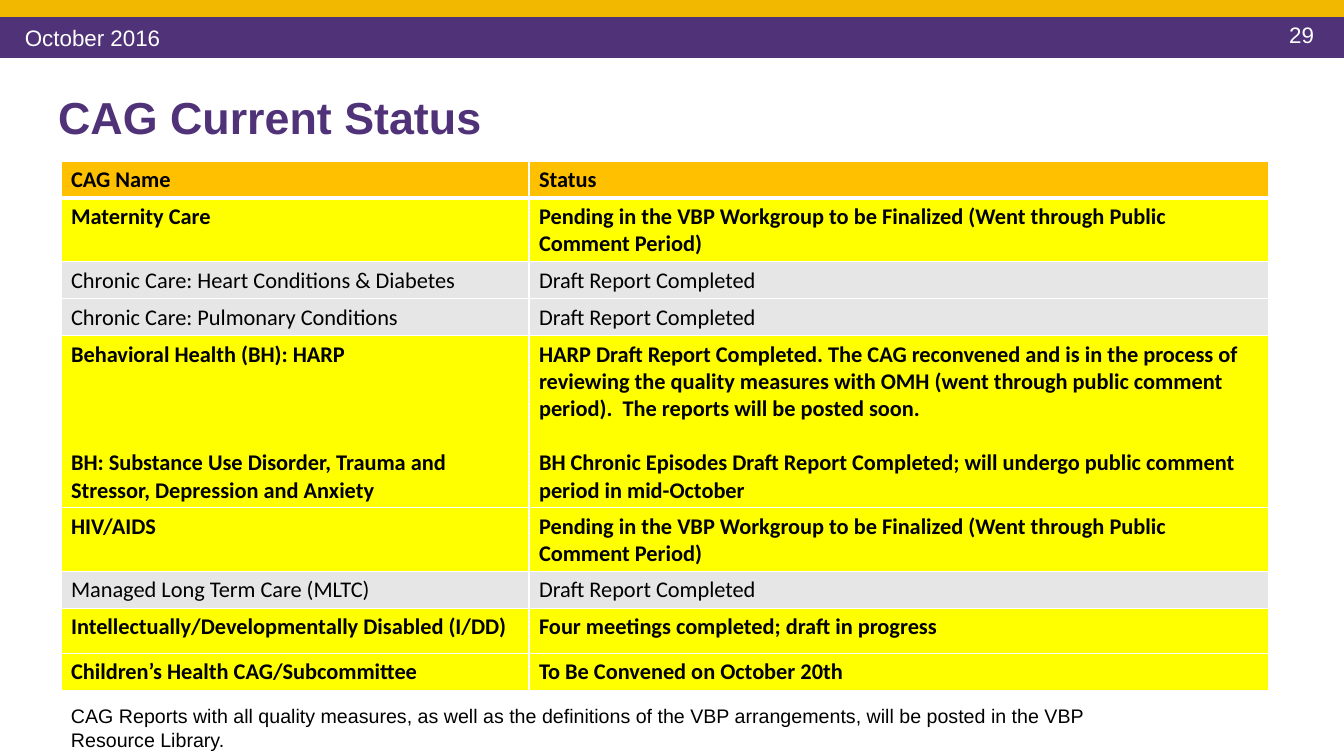
from lxml.etree import SubElement
from pptx import Presentation
from pptx.dml.color import RGBColor
from pptx.enum.shapes import MSO_SHAPE
from pptx.enum.text import MSO_ANCHOR, MSO_AUTO_SIZE, PP_ALIGN
from pptx.oxml.ns import qn
from pptx.util import Emu, Pt

THEME = {
    "purple": "503278", "gold": "F2B800", "header": "FFC000",
    "highlight": "FFFF00", "gray": "E7E6E6", "white": "FFFFFF", "black": "000000",
    "title_size": 32, "band_size": 16, "table_size": 16, "note_size": 14,
    "font": "Arial", "table_font": "Calibri",
}
EMU_PER_PX = 914400 / 100.8


def px(*lengths):
    """Turn pixel lengths into EMU."""
    return [Emu(round(n * EMU_PER_PX)) for n in lengths]


def write(tf, text, size, color, bold=False, font="font", **para):
    """Fill a text frame; each line of text becomes a paragraph."""
    tf.word_wrap = True
    tf.text = text
    for p in tf.paragraphs:
        for name, value in para.items():
            setattr(p, name, value)
        look = {"name": THEME[font], "size": Pt(THEME[size]), "bold": bold}
        for name, value in look.items():
            setattr(p.font, name, value)
        p.font.color.rgb = RGBColor.from_string(THEME[color])


prs = Presentation()
prs.slide_width, prs.slide_height = px(1344, 756)
s = prs.slides.add_slide(prs.slide_layouts[5])

# Bands across the top
for top, height, color in [(15, 43, "purple"), (0, 17, "gold")]:
    band = s.shapes.add_shape(MSO_SHAPE.RECTANGLE, *px(0, top, 1344, height))
    band.shadow.inherit = False
    band.fill.solid()
    band.fill.fore_color.rgb = RGBColor.from_string(THEME[color])
    band.line.fill.background()

# Title
title = s.shapes.title
title.left, title.top, title.width, title.height = px(48, 76, 1221, 87)
write(title.text_frame, "CAG Current Status", "title_size", "purple", True,
      alignment=PP_ALIGN.LEFT, line_spacing=0.9)
title.text_frame.auto_size = MSO_AUTO_SIZE.NONE
title.text_frame.vertical_anchor = MSO_ANCHOR.MIDDLE

# Date, page number and note
NOTE = ("CAG Reports with all quality measures, as well as the definitions of the VBP "
        "arrangements, will be posted in the VBP Resource Library.")
labels = [
    ("October 2016", (15, 18, 302, 40), "band_size", "white", PP_ALIGN.LEFT, MSO_ANCHOR.MIDDLE),
    ("29", (1151, 16, 173, 37), "band_size", "white", PP_ALIGN.RIGHT, MSO_ANCHOR.TOP),
    (NOTE, (61, 699, 1049, 57), "note_size", "black", PP_ALIGN.LEFT, MSO_ANCHOR.TOP),
]
for text, box, size, color, align, anchor in labels:
    tf = s.shapes.add_textbox(*px(*box)).text_frame
    write(tf, text, size, color, alignment=align)
    tf.vertical_anchor = anchor

# Status table: row height, fill, name, status
PENDING = "Pending in the VBP Workgroup to be Finalized (Went through Public Comment Period)"
DRAFT = "Draft Report Completed"
rows = [
    (37, "header", "CAG Name", "Status"),
    (63, "highlight", "Maternity Care", PENDING),
    (36, "gray", "Chronic Care: Heart Conditions & Diabetes", DRAFT),
    (36, "gray", "Chronic Care: Pulmonary Conditions", DRAFT),
    (171, "highlight",
     "Behavioral Health (BH): HARP\n"
     "BH: Substance Use Disorder, Trauma and Stressor, Depression and Anxiety",
     "HARP Draft Report Completed. The CAG reconvened and is in the process of reviewing "
     "the quality measures with OMH (went through public comment period).  "
     "The reports will be posted soon.\n"
     "BH Chronic Episodes Draft Report Completed; will undergo public comment period "
     "in mid-October"),
    (63, "highlight", "HIV/AIDS", PENDING),
    (37, "gray", "Managed Long Term Care (MLTC)", DRAFT),
    (45, "highlight", "Intellectually/Developmentally Disabled (I/DD)",
     "Four meetings completed; draft in progress"),
    (36, "highlight", "Children’s Health CAG/Subcommittee", "To Be Convened on October 20th"),
]
PART_GAPS = (58, 19)  # points before the second paragraph, by column
col_widths = (468, 740)
table_height = sum(row[0] for row in rows)
table = s.shapes.add_table(len(rows), 2, *px(61, 161, sum(col_widths), table_height)).table
for column, width in zip(table.columns, px(*col_widths)):
    column.width = width

for i, (height, fill, *texts) in enumerate(rows):
    table.rows[i].height = px(height)[0]
    for j, text in enumerate(texts):
        cell = table.cell(i, j)
        write(cell.text_frame, text, "table_size", "black", fill != "gray", "table_font")
        for p in cell.text_frame.paragraphs[1:]:
            p.space_before = Pt(PART_GAPS[j])
        tcPr = cell._tc.get_or_add_tcPr()
        for side in "LRTB":
            thick = (i, side) in [(0, "B"), (1, "T")]
            ln = SubElement(tcPr, qn(f"a:ln{side}"), w=str(Pt(3 if thick else 1)))
            SubElement(SubElement(ln, qn("a:solidFill")), qn("a:srgbClr"), val=THEME["white"])
        cell.fill.solid()
        cell.fill.fore_color.rgb = RGBColor.from_string(THEME[fill])

prs.save("out.pptx")
